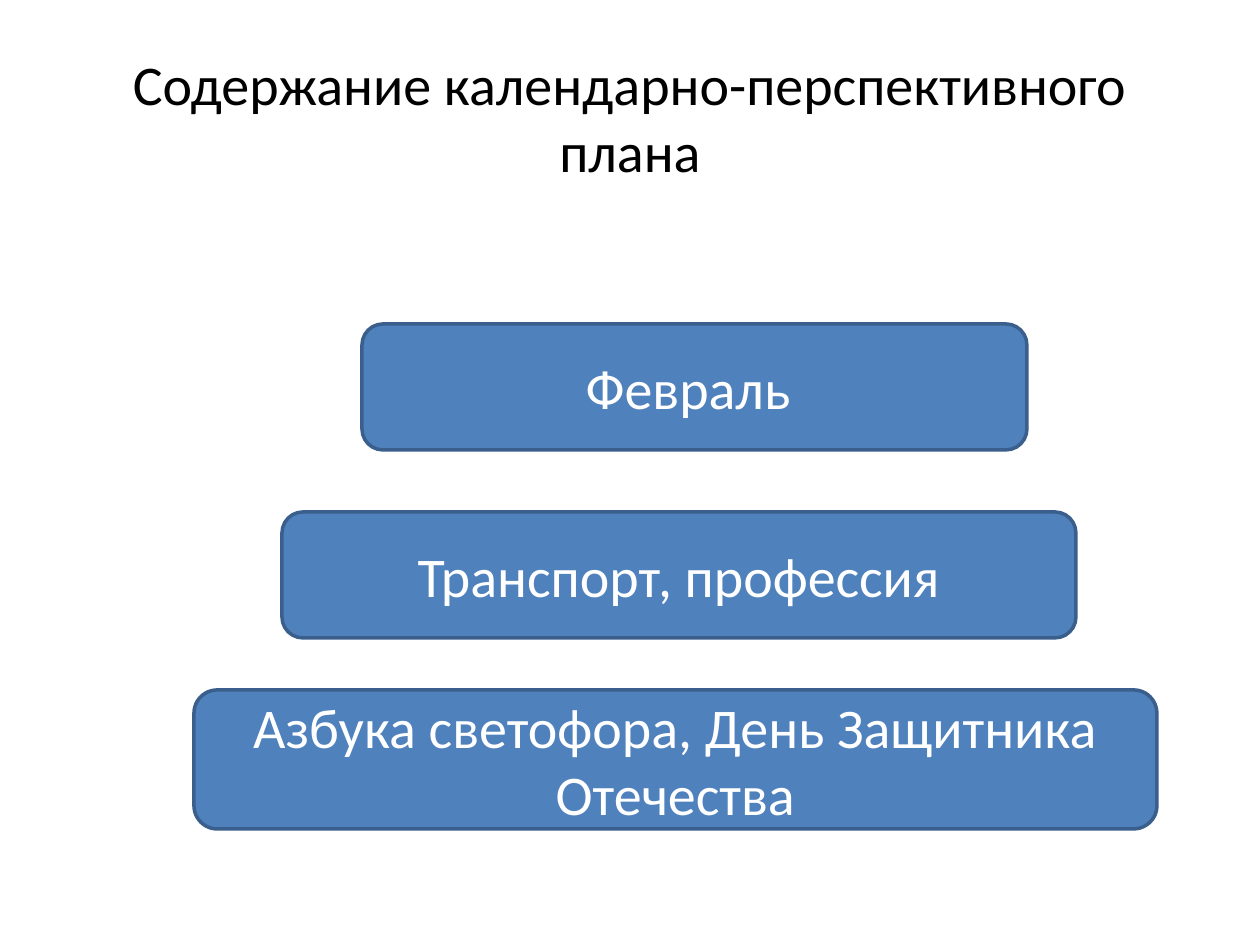
"""Build the slide with the February plan contents."""
from pptx import Presentation
from pptx.dml.color import RGBColor
from pptx.enum.shapes import MSO_SHAPE
from pptx.enum.text import MSO_ANCHOR, PP_ALIGN
from pptx.util import Emu, Pt

PX = 914400 // 126
BLACK = RGBColor(0x00, 0x00, 0x00)
WHITE = RGBColor(0xFF, 0xFF, 0xFF)
BLUE = RGBColor(0x4F, 0x81, 0xBD)
DARK_BLUE = RGBColor(0x3A, 0x5F, 0x8C)


def write_text(shape, text, color):
    frame = shape.text_frame
    frame.word_wrap = True
    frame.vertical_anchor = MSO_ANCHOR.MIDDLE
    paragraph = frame.paragraphs[0]
    paragraph.text = text
    paragraph.alignment = PP_ALIGN.CENTER
    paragraph.font.name = "Calibri"
    paragraph.font.size = Pt(32)
    paragraph.font.color.rgb = color


presentation = Presentation()
presentation.slide_width = Emu(1260 * PX)
presentation.slide_height = Emu(945 * PX)
slide = presentation.slides.add_slide(presentation.slide_layouts[5])

title = slide.shapes.title
title.left, title.top = Emu(63 * PX), Emu(38 * PX)
title.width, title.height = Emu(1134 * PX), Emu(157 * PX)
write_text(title, "Содержание календарно-перспективного плана", BLACK)

boxes = [
    ("Февраль ", 362, 324, 665, 126),
    ("Транспорт, профессия", 282, 512, 794, 126),
    ("Азбука светофора, День Защитника Отечества", 194, 690, 963, 139),
]
for text, left, top, width, height in boxes:
    box = slide.shapes.add_shape(
        MSO_SHAPE.ROUNDED_RECTANGLE,
        Emu(left * PX), Emu(top * PX), Emu(width * PX), Emu(height * PX),
    )
    box.shadow.inherit = False
    box.fill.solid()
    box.fill.fore_color.rgb = BLUE
    box.line.color.rgb = DARK_BLUE
    box.line.width = Pt(2)
    write_text(box, text, WHITE)

presentation.save("out.pptx")
